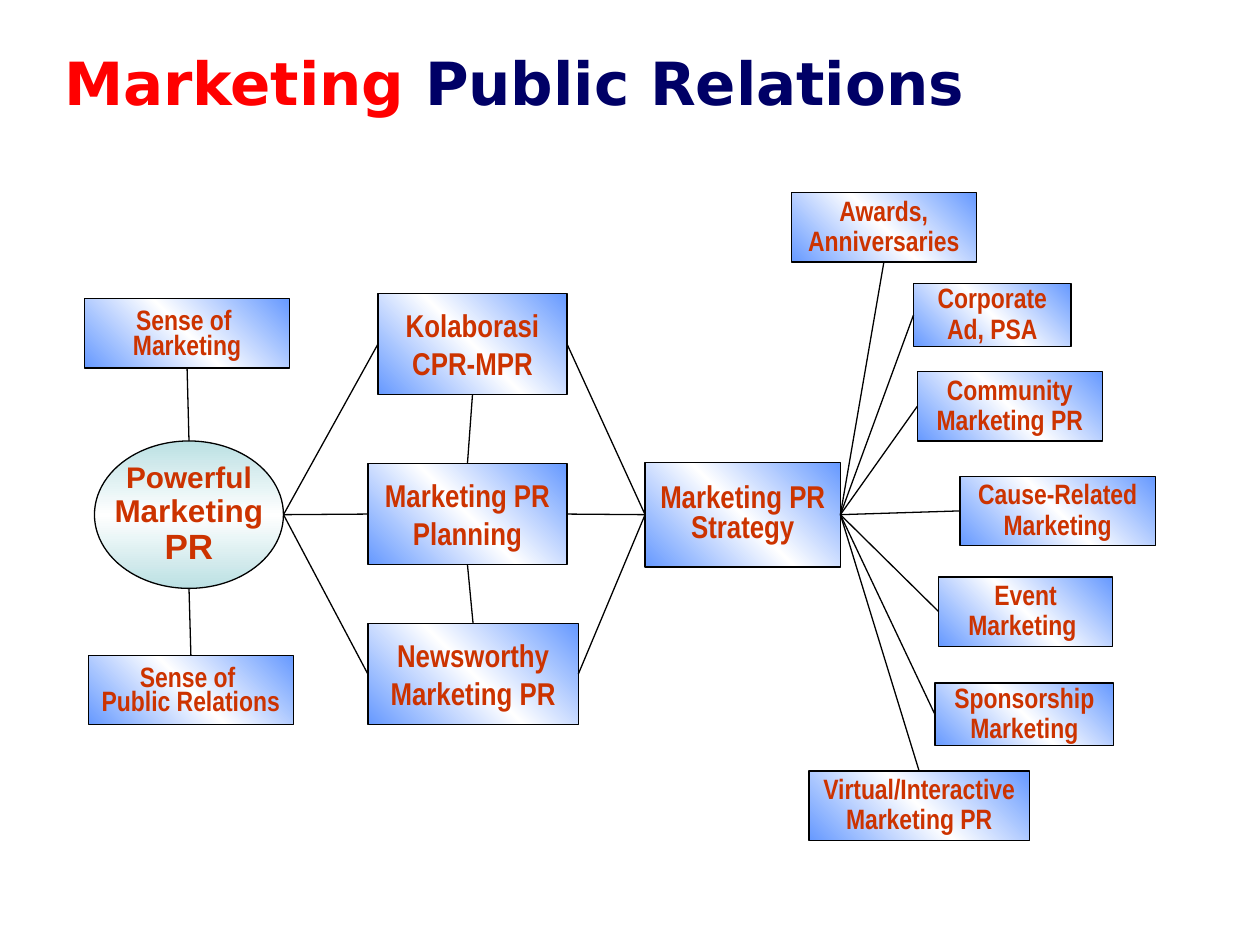
"""Build the Marketing Public Relations diagram slide."""
from copy import deepcopy

from lxml import etree
from pptx import Presentation
from pptx.dml.color import RGBColor
from pptx.enum.shapes import MSO_CONNECTOR, MSO_SHAPE
from pptx.enum.text import MSO_ANCHOR, MSO_AUTO_SIZE, PP_ALIGN
from pptx.oxml.ns import qn
from pptx.util import Inches, Pt

RECTANGLE, OVAL = MSO_SHAPE.RECTANGLE, MSO_SHAPE.OVAL
STRAIGHT = MSO_CONNECTOR.STRAIGHT
MIDDLE, CENTER = MSO_ANCHOR.MIDDLE, PP_ALIGN.CENTER
NO_FIT = MSO_AUTO_SIZE.NONE
TOP, LEFT, BOTTOM, RIGHT = range(4)

COLORS = {
    "red": "FF0000", "navy": "000066", "rust": "CC3300", "blue": "6699FF",
    "teal": "BBE0E3", "white": "FFFFFF", "black": "000000",
}
COLORS = {name: RGBColor.from_string(value) for name, value in COLORS.items()}


def add_span(para, text, color, **font):
    span = para.add_run()
    span.text = text
    span.font.color.rgb = COLORS[color]
    for name, value in {"bold": True, **font}.items():
        setattr(span.font, name, value)


def add_node(kind, place, edge_color, angle, lines, face, wrap=True):
    box = page.shapes.add_shape(kind, *map(Inches, place))
    box.shadow.inherit = False
    box.line.color.rgb = COLORS["black"]
    box.line.width = Pt(0.75)
    box.fill.gradient()
    box.fill.gradient_angle = angle
    first_stop = box._element.spPr.find(".//" + qn("a:gs"))
    first_stop.addnext(deepcopy(first_stop))
    stops = zip(box.fill.gradient_stops, (0, 0.5, 1), (edge_color, "white", edge_color))
    for stop, position, color in stops:
        stop.position = position
        stop.color.rgb = COLORS[color]
    frame = box.text_frame
    frame.word_wrap = wrap
    frame.vertical_anchor = MIDDLE
    for number, (text, size, spacing) in enumerate(lines):
        para = frame.add_paragraph() if number else frame.paragraphs[0]
        para.alignment = CENTER
        para.line_spacing = spacing
        add_span(para, text, "rust", name=face, size=Pt(size))
    return box


deck = Presentation()
deck.slide_width, deck.slide_height = Inches(10), Inches(7.5)
page = deck.slides.add_slide(deck.slide_layouts[5])

title = page.shapes.title
title_place = {"left": 0.33, "top": 0.33, "width": 7.83, "height": 0.75}
for name, value in title_place.items():
    setattr(title, name, Inches(value))
title_format = {"word_wrap": True, "auto_size": NO_FIT,
                "vertical_anchor": MIDDLE, "margin_right": Inches(0.43)}
for name, value in title_format.items():
    setattr(title.text_frame, name, value)
heading = title.text_frame.paragraphs[0]
heading.alignment = CENTER
heading.line_spacing = 0.8
for text, color in (("Marketing ", "red"), ("Public Relations", "navy")):
    add_span(heading, text, color, name="DejaVu Sans", size=Pt(34))

BOXES = {
    "marketing sense": ((0.67, 2.37, 1.63, 0.55), 16, (0.9, 0.7), ("Sense of ", "Marketing")),
    "pr sense": ((0.7, 5.2, 1.63, 0.55), 16, (0.9, 0.7), ("Sense of ", "Public Relations")),
    "collaboration": ((3, 2.33, 1.5, 0.8), 18, (1, 1), ("Kolaborasi", "CPR-MPR")),
    "planning": ((2.92, 3.68, 1.58, 0.8), 18, (1, 1), ("Marketing PR", "Planning")),
    "newsworthy": ((2.92, 4.95, 1.67, 0.8), 18, (1, 1), ("Newsworthy", "Marketing PR")),
    "strategy": ((5.12, 3.67, 1.55, 0.83), 18, (0.8, 0.8), ("Marketing PR", "Strategy")),
    "awards": ((6.28, 1.53, 1.47, 0.55), 16, (0.9, 0.9), ("Awards,", "Anniversaries")),
    "corporate": ((7.25, 2.25, 1.25, 0.5), 16, (0.9, 0.9), ("Corporate", "Ad, PSA")),
    "community": ((7.28, 2.95, 1.47, 0.55), 16, (0.9, 0.9), ("Community", "Marketing PR")),
    "cause": ((7.62, 3.78, 1.55, 0.55), 16, (0.9, 0.9), ("Cause-Related", "Marketing")),
    "event": ((7.45, 4.58, 1.38, 0.55), 16, (0.9, 0.9), ("Event", "Marketing ")),
    "sponsorship": ((7.42, 5.42, 1.42, 0.5), 16, (0.9,), ("Sponsorship Marketing",)),
    "virtual": ((6.42, 6.12, 1.75, 0.55), 16, (0.9,), ("Virtual/Interactive Marketing PR",)),
}
nodes = {}
for name, (place, size, spacings, texts) in BOXES.items():
    lines = [(text, size, spacing) for text, spacing in zip(texts, spacings)]
    nodes[name] = add_node(RECTANGLE, place, "blue", 45, lines, "Arial Narrow")

core_lines = [("Powerful", 17, 0.9), ("Marketing", 18, 0.9), ("PR", 20, 0.9)]
core = add_node(OVAL, (0.75, 3.5, 1.5, 1.17), "teal", 270, core_lines, "Arial", wrap=False)
core_middle = core.left + core.width // 2
core_top = (core_middle, core.top)
core_bottom = (core_middle, core.top + core.height)
core_right = (core.left + core.width, core.top + core.height // 2)

links = [
    (core_top, "marketing sense", BOTTOM),
    (core_bottom, "pr sense", TOP),
    (("collaboration", BOTTOM), "planning", TOP),
    (("planning", BOTTOM), "newsworthy", TOP),
]
for name in ("collaboration", "planning", "newsworthy"):
    links += [(core_right, name, LEFT), ((name, RIGHT), "strategy", LEFT)]
tactic_sides = {"awards": BOTTOM, "virtual": TOP}
for name in ("awards", "corporate", "community", "cause", "event", "sponsorship", "virtual"):
    links.append((("strategy", RIGHT), name, tactic_sides.get(name, LEFT)))

for start, target, side in links:
    joined = start[0] in nodes
    origin = (0, 0) if joined else start
    link = page.shapes.add_connector(STRAIGHT, *origin, *origin)
    if joined:
        link.begin_connect(nodes[start[0]], start[1])
    link.end_connect(nodes[target], side)
    link.line.color.rgb = COLORS["black"]
    link.line.width = Pt(0.75)
    etree.SubElement(link._element.spPr, qn("a:effectLst"))

deck.save("out.pptx")
